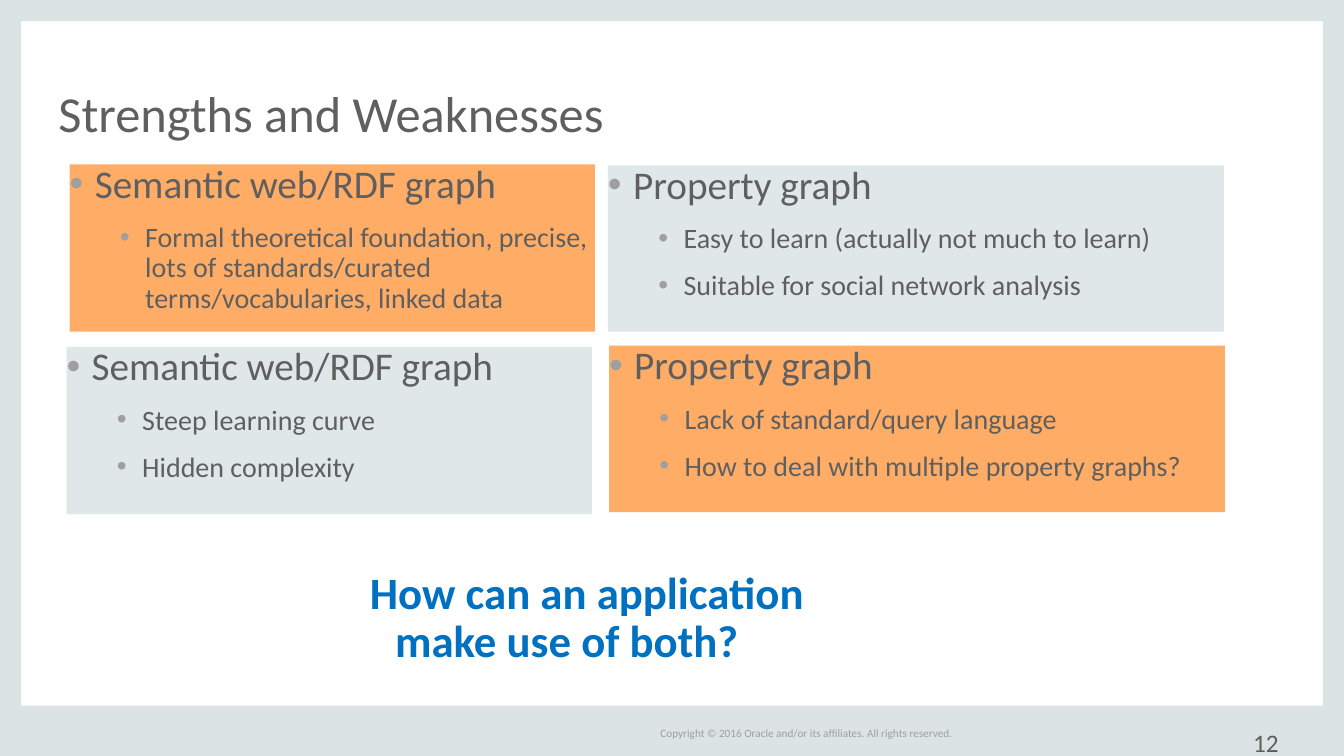
from lxml import etree
from pptx import Presentation
from pptx.dml.color import RGBColor
from pptx.enum.shapes import MSO_SHAPE
from pptx.enum.text import MSO_ANCHOR, MSO_AUTO_SIZE, PP_ALIGN
from pptx.oxml.ns import qn
from pptx.util import Pt

PX = 9144  # 100 px to the inch
WIDE, HIGH = 1333, 750
FONT = "Calibri"
EDGE = RGBColor(0xDC, 0xE3, 0xE4)
PALE = RGBColor(0xDF, 0xE7, 0xE9)
ORANGE = RGBColor(0xFF, 0xAD, 0x66)
INK = RGBColor(0x5F, 0x5F, 0x5F)
GREY = RGBColor(0x9F, 0x9F, 0x9F)
BLUE = RGBColor(0x00, 0x70, 0xC0)
RECT = MSO_SHAPE.RECTANGLE
TOP, MIDDLE, BOTTOM = MSO_ANCHOR.TOP, MSO_ANCHOR.MIDDLE, MSO_ANCHOR.BOTTOM
LEFT = PP_ALIGN.LEFT
FIXED = MSO_AUTO_SIZE.NONE

PANELS = [
    ((69, 163, 521, 166), ORANGE, "Semantic web/RDF graph",
     ["Formal theoretical foundation, precise, lots of standards/curated "
      "terms/vocabularies, linked data"]),
    ((603, 164, 611, 165), PALE, "Property graph",
     ["Easy to learn (actually not much to learn)",
      "Suitable for social network analysis"]),
    ((66, 344, 521, 166), PALE, "Semantic web/RDF graph",
     ["Steep learning curve", "Hidden complexity"]),
    ((604, 343, 611, 165), ORANGE, "Property graph",
     ["Lack of standard/query language",
      "How to deal with multiple property graphs?"]),
]


def emu(box):
    return [n * PX for n in box]


def place(shape, box):
    shape.left, shape.top, shape.width, shape.height = emu(box)


def setup(frame, anchor, inset=0, wrap=True):
    """Give a text frame its anchor, margins and wrapping."""
    frame.auto_size = FIXED
    frame.word_wrap = wrap
    frame.vertical_anchor = anchor
    frame.margin_left = frame.margin_right = inset * PX
    frame.margin_top = frame.margin_bottom = inset * PX // 2


def style(para, size, color=INK, bold=False, lines=1.0, before=0):
    para.alignment = LEFT
    para.line_spacing = lines
    para.space_before = Pt(before)
    font = para.font
    font.name, font.size, font.bold = FONT, Pt(size), bold
    font.color.rgb = color


def indent(para, left):
    """Hang the first line a quarter inch before the left indent."""
    props = para._p.get_or_add_pPr()
    props.set("marL", str(left * PX))
    props.set("indent", str(-25 * PX))
    return props


def bullet(para, left):
    props = indent(para, left)
    tint = etree.SubElement(props, qn("a:buClr"))
    etree.SubElement(tint, qn("a:srgbClr"), val=str(GREY))
    etree.SubElement(props, qn("a:buFont"), typeface="Arial")
    etree.SubElement(props, qn("a:buChar"), char="•")


def border(slide, box):
    x, y, w, h = box
    sides = [(x, y, 21, h), (x + w - 21, y, 21, h),
             (x, y + h - 50, w, 50), (x, y, w, 21)]
    for side in sides:
        bar = slide.shapes.add_shape(RECT, *emu(side))
        bar.shadow.inherit = False
        bar.fill.solid()
        bar.fill.fore_color.rgb = EDGE
        bar.line.fill.background()


def title(slide, box, text):
    shape = slide.shapes.title
    place(shape, box)
    setup(shape.text_frame, BOTTOM)
    shape.text_frame.text = text
    style(shape.text_frame.paragraphs[0], 36, lines=0.8)


def panel(shape, box, fill, head, points):
    """Fill a body placeholder with a heading and its points."""
    place(shape, box)
    shape.fill.solid()
    shape.fill.fore_color.rgb = fill
    frame = shape.text_frame
    setup(frame, TOP)
    frame.text = head
    bullet(frame.paragraphs[0], 25)
    style(frame.paragraphs[0], 28, lines=0.9)
    for point in points:
        para = frame.add_paragraph()
        para.text, para.level = point, 1
        bullet(para, 75)
        style(para, 20, lines=0.9, before=12)


def label(slide, box, text, anchor=TOP, inset=10, wrap=True):
    """Add a text box and return its paragraph."""
    frame = slide.shapes.add_textbox(*emu(box)).text_frame
    setup(frame, anchor, inset, wrap)
    frame.text = text
    return frame.paragraphs[0]


def footer(slide, box):
    x, y, w, h = box
    note = label(slide, (x + 655, y + 17, 305, 20),
                 "Copyright © 2016 Oracle and/or its affiliates. "
                 "All rights reserved.", MIDDLE, 0, False)
    style(note, 8, GREY)
    style(label(slide, (x + w - 100, y + 17, 82, 33), "12"), 18)


def question(slide, box):
    para = label(slide, box, "How can an application make use of both?")
    indent(para, 25)
    style(para, 32, BLUE, True, 0.9)


def main():
    deck = Presentation()
    deck.slide_width, deck.slide_height = WIDE * PX, HIGH * PX
    slide = deck.slides.add_slide(deck.slide_layouts[4])
    border(slide, (0, 0, WIDE, HIGH))
    title(slide, (58, 44, 1217, 97), "Strengths and Weaknesses")
    for idx, data in enumerate(PANELS, 1):
        panel(slide.placeholders[idx], *data)
    question(slide, (357, 561, 515, 107))
    footer(slide, (0, 700, WIDE, 50))
    deck.save("out.pptx")


if __name__ == "__main__":
    main()
